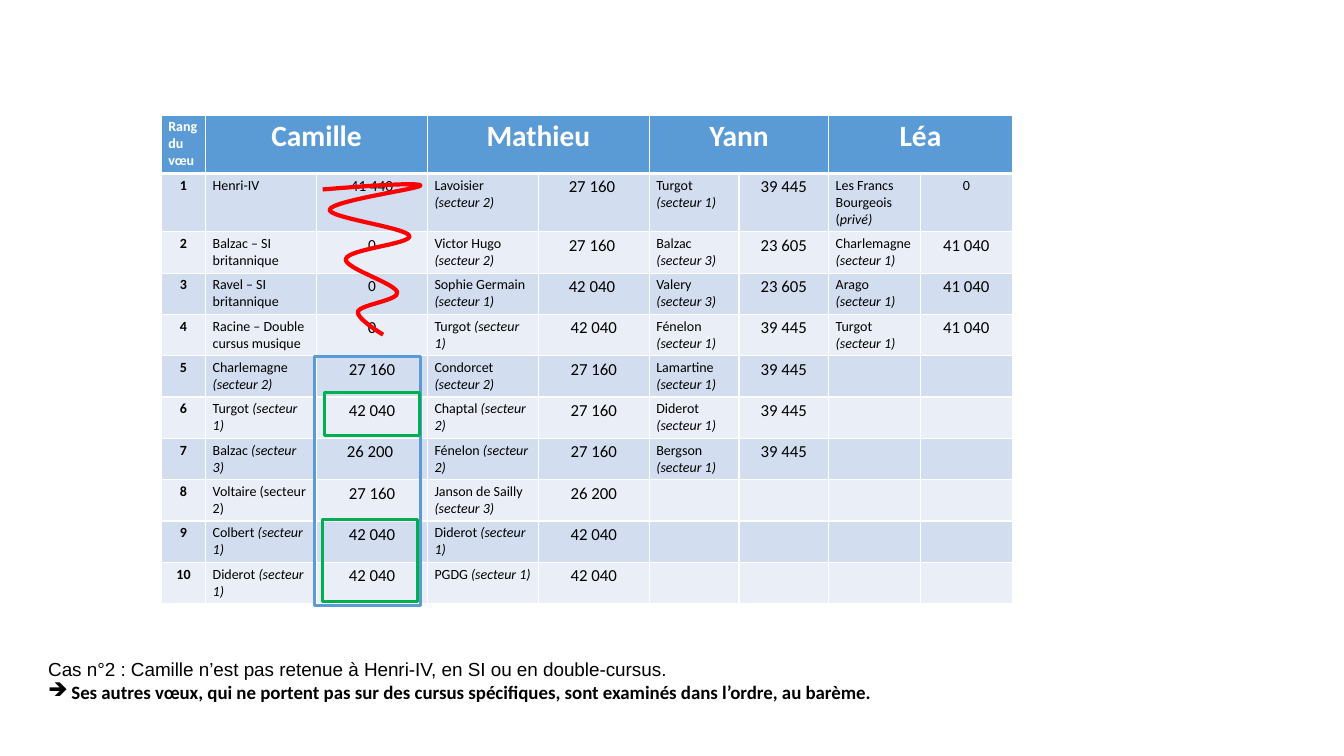
from lxml.etree import SubElement
from pptx import Presentation
from pptx.dml.color import RGBColor
from pptx.enum.shapes import MSO_SHAPE
from pptx.enum.text import MSO_AUTO_SIZE, PP_ALIGN
from pptx.oxml.ns import qn
from pptx.util import Inches, Pt

WHITE = RGBColor(0xFF, 0xFF, 0xFF)
BLACK = RGBColor(0, 0, 0)
BLUE = RGBColor(0x5B, 0x9B, 0xD5)
BAND_DARK = RGBColor(0xD2, 0xDE, 0xEF)
BAND_LIGHT = RGBColor(0xEA, 0xEF, 0xF7)
RED = RGBColor(0xFF, 0, 0)
GREEN = RGBColor(0, 0xB0, 0x50)

COLUMN_WIDTHS = [0.44] + [1.1] * 4 + [0.89] * 2 + [0.91] * 2
ROW_HEIGHTS = [0.58] * 2 + [0.41] * 9
PUPILS = ["Camille", "Mathieu", "Yann", "Léa"]

# School and score for each pupil; the text after "|" is italic
WISHES = [
    ["Henri-IV", "41 440", "Lavoisier |(secteur 2)", "27 160 ",
     "Turgot |(secteur 1)", "39 445", "Les Francs Bourgeois (|privé)", "0"],
    ["Balzac – SI britannique", "0", "Victor Hugo| (secteur 2)", "27 160 ",
     "Balzac |(secteur 3)", "23 605", "Charlemagne |(secteur 1)", "41 040"],
    ["Ravel – SI britannique", "0", "Sophie Germain |(secteur 1)", "42 040 ",
     "Valery |(secteur 3)", "23 605", "Arago |(secteur 1)", "41 040"],
    ["Racine – Double cursus musique", "0", "Turgot |(secteur 1)", "42 040",
     "Fénelon |(secteur 1)", "39 445", "Turgot |(secteur 1)", "41 040"],
    ["Charlemagne |(secteur 2)", "27 160", "Condorcet |(secteur 2)", "27 160",
     "Lamartine |(secteur 1)", "39 445"],
    ["Turgot |(secteur 1)", "42 040", "Chaptal |(secteur 2)", "27 160",
     "Diderot |(secteur 1)", "39 445"],
    ["Balzac| (secteur 3)", "26 200 ", "Fénelon |(secteur 2)", "27 160",
     "Bergson |(secteur 1)", "39 445"],
    ["Voltaire (secteur 2)", "27 160", "Janson de Sailly |(secteur 3)", "26 200"],
    ["Colbert |(secteur 1)", "42 040", "Diderot |(secteur 1)", "42 040"],
    ["Diderot |(secteur 1)", "42 040", "PGDG |(secteur 1)", "42 040"],
]
# Sizes of the scores that differ from 12 points, by row and column
SCORE_SIZES = {(1, 2): 11, (2, 2): 11, (3, 2): 11, (1, 8): 10}

# Start of the scribble, then two control points and an end for each curve
SCRIBBLE = [
    (3.2, 1.88),
    (3.68, 1.84), (4.16, 1.81), (4.17, 1.84),
    (4.18, 1.87), (3.29, 1.99), (3.27, 2.08),
    (3.25, 2.16), (4.04, 2.26), (4.06, 2.34),
    (4.09, 2.42), (3.45, 2.47), (3.43, 2.57),
    (3.41, 2.66), (3.92, 2.81), (3.94, 2.9),
    (3.96, 2.98), (3.58, 3.02), (3.55, 3.09),
    (3.53, 3.16), (3.8, 3.32), (3.8, 3.32),
]


class SlideBuilder:
    def __init__(self, page, font="Calibri", padding=0.07):
        self.page = page
        self.font = font
        self.padding = Inches(padding)

    def span(self, para, text, size, color=BLACK, **formats):
        span = para.add_run()
        span.text = text
        values = {"name": self.font, "size": Pt(size), "bold": False, **formats}
        for name, value in values.items():
            setattr(span.font, name, value)
        span.font.color.rgb = color

    def table(self, left, top, widths, heights):
        frame = self.page.shapes.add_table(
            len(heights), len(widths), Inches(left), Inches(top),
            Inches(sum(widths)), Inches(sum(heights)))
        grid = frame.table
        for column, width in zip(grid.columns, widths):
            column.width = Inches(width)
        for row, height in zip(grid.rows, heights):
            row.height = Inches(height)
        return grid

    def style_cell(self, cell, fill, bottom=1):
        margins = {"margin_left": self.padding, "margin_right": self.padding,
                   "margin_top": self.padding // 2, "margin_bottom": self.padding // 2}
        for name, value in margins.items():
            setattr(cell, name, value)
        properties = cell._tc.get_or_add_tcPr()
        for side, width in {"L": 1, "R": 1, "T": 1, "B": bottom}.items():
            border = SubElement(properties, qn(f"a:ln{side}"), w=str(Pt(width)))
            SubElement(SubElement(border, qn("a:solidFill")), qn("a:srgbClr"),
                       val=str(WHITE))
        cell.fill.solid()
        cell.fill.fore_color.rgb = fill

    def write_cell(self, cell, text, size, centered=True, **formats):
        para = cell.text_frame.paragraphs[0]
        para.alignment = PP_ALIGN.CENTER if centered else PP_ALIGN.LEFT
        plain, _, slanted = text.partition("|")
        self.span(para, plain, size, **formats)
        if slanted:
            self.span(para, slanted, size, italic=True, **formats)

    def text_box(self, left, top, width, height):
        box = self.page.shapes.add_textbox(
            Inches(left), Inches(top), Inches(width), Inches(height))
        box.text_frame.word_wrap = True
        box.text_frame.auto_size = MSO_AUTO_SIZE.SHAPE_TO_FIT_TEXT
        return box.text_frame

    def bullet(self, para, mark, indent):
        properties = para._p.get_or_add_pPr()
        properties.set("marL", str(Inches(indent)))
        properties.set("indent", str(-Inches(indent)))
        SubElement(properties, qn("a:buChar"), char=mark)

    def outline(self, shape, color, weight):
        shape.shadow.inherit = False
        shape.fill.background()
        shape.line.color.rgb = color
        shape.line.width = Pt(weight)

    def frame(self, left, top, width, height, color):
        box = self.page.shapes.add_shape(
            MSO_SHAPE.RECTANGLE, Inches(left), Inches(top),
            Inches(width), Inches(height))
        self.outline(box, color, 2.25)

    def curve(self, points, color, weight):
        points = [(Inches(x), Inches(y)) for x, y in points]
        builder = self.page.shapes.build_freeform(*points[0])
        builder.add_line_segments(points[1:], close=False)
        shape = builder.convert_to_shape()
        # Merge every three line segments into one cubic curve
        outline = shape._element.find(".//" + qn("a:path"))
        segments = outline.findall(qn("a:lnTo"))
        for start in range(0, len(segments), 3):
            cubic = SubElement(outline, qn("a:cubicBezTo"))
            for segment in segments[start:start + 3]:
                cubic.append(segment[0])
                outline.remove(segment)
        self.outline(shape, color, weight)


def main():
    deck = Presentation()
    deck.slide_width, deck.slide_height = Inches(13.33), Inches(7.5)
    builder = SlideBuilder(deck.slides.add_slide(deck.slide_layouts[6]))

    # Table: fills and borders
    grid = builder.table(1.6, 1.14, COLUMN_WIDTHS, ROW_HEIGHTS)
    for row in range(len(ROW_HEIGHTS)):
        fill = BLUE if row == 0 else BAND_DARK if row % 2 else BAND_LIGHT
        for column in range(len(COLUMN_WIDTHS)):
            builder.style_cell(grid.cell(row, column), fill, 1 if row else 3)

    # Table: heading
    corner = grid.cell(0, 0)
    builder.write_cell(corner, "Rang", 10, False, bold=True, color=WHITE)
    corner.text_frame.paragraphs[0].add_line_break()
    builder.write_cell(corner, "du vœu", 10, False, bold=True, color=WHITE)
    for index, pupil in enumerate(PUPILS):
        column = 1 + 2 * index
        grid.cell(0, column).merge(grid.cell(0, column + 1))
        builder.write_cell(grid.cell(0, column), pupil, 21, bold=True, color=WHITE)

    # Table: ranks, schools and scores
    for row, wishes in enumerate(WISHES, 1):
        builder.write_cell(grid.cell(row, 0), str(row), 10, bold=True)
        for column, text in enumerate(wishes, 1):
            is_score = column % 2 == 0
            size = SCORE_SIZES.get((row, column), 12) if is_score else 10
            builder.write_cell(grid.cell(row, column), text, size, is_score)

    # Explanation below the table
    note = builder.text_box(0.38, 6.48, 12.67, 1.24)
    builder.span(note.paragraphs[0],
                 "Cas n°2 : Camille n’est pas retenue à Henri-IV, "
                 "en SI ou en double-cursus.", 13.5, name="Arial")
    para = note.add_paragraph()
    builder.bullet(para, "➔", 0.23)
    builder.span(para, "Ses autres vœux, qui ne portent pas sur des cursus spécifiques, "
                 "sont examinés dans l’ordre, au barème.", 13.5, bold=True)

    # Crossed-out wishes and highlighted scores
    builder.curve(SCRIBBLE, RED, 3)
    builder.frame(3.12, 3.54, 1.05, 2.47, BLUE)
    builder.frame(3.22, 3.89, 0.94, 0.43, GREEN)
    builder.frame(3.2, 5.15, 0.94, 0.82, GREEN)

    deck.save("out.pptx")


if __name__ == "__main__":
    main()
